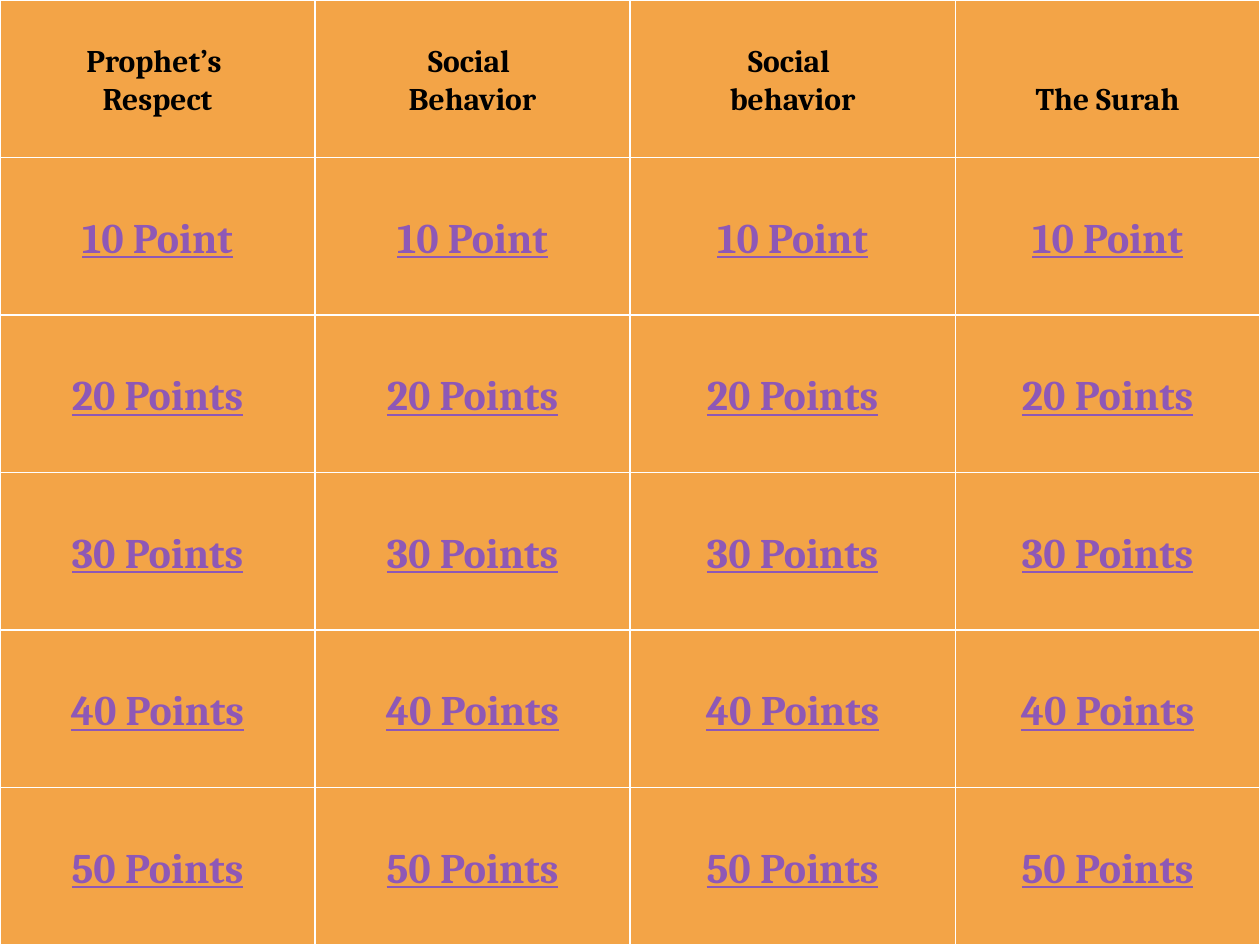
from itertools import accumulate

from pptx import Presentation
from pptx.dml.color import RGBColor
from pptx.enum.shapes import MSO_SHAPE as Shape
from pptx.enum.text import MSO_ANCHOR as Anchor, PP_ALIGN as Align
from pptx.util import Pt

WIDTHS = [180, 180, 185.8, 174.2]
LEFTS = [0, *accumulate(WIDTHS[:-1])]
ROW = 90
INSET = 3.6
DROP = 21.7  # sets a one-line topic level with the second line of the others
TOPICS = [
    ["Prophet’s ", "Respect"],
    ["Social ", "Behavior"],
    ["Social ", "behavior"],
    ["The Surah"],
]
SCORES = ["10 Point", "20 Points", "30 Points", "40 Points", "50 Points"]


def color(code):
    return RGBColor.from_string(code)


class Board:
    font = "Cambria"
    fill = "F3A447"
    edge = "FFFFFF"
    ink = "000000"
    link = "8E58B6"

    def __init__(self, slide):
        self.slide = slide

    def tile(self, col, row):
        box = self.slide.shapes.add_shape(
            Shape.ACTION_BUTTON_CUSTOM,
            Pt(LEFTS[col]), Pt(row * ROW), Pt(WIDTHS[col]), Pt(ROW))
        box.shadow.inherit = False
        box.fill.solid()
        box.fill.fore_color.rgb = color(self.fill)
        box.line.color.rgb = color(self.edge)
        box.line.width = Pt(0.75)
        frame = box.text_frame
        frame.word_wrap = False
        frame.vertical_anchor = Anchor.MIDDLE
        return frame

    def label(self, frame, lines, size, ink, under=False):
        para = frame.paragraphs[0]
        para.alignment = Align.CENTER
        for i, line in enumerate(lines):
            if i:
                para.add_line_break()
            run = para.add_run()
            run.text = line
            font = run.font
            font.name = self.font
            font.size = Pt(size)
            font.bold = True
            font.underline = under
            font.color.rgb = color(ink)

    def topic(self, col, lines):
        frame = self.tile(col, 0)
        if len(lines) == 1:
            frame.margin_top = Pt(INSET + DROP)
        self.label(frame, lines, 18, self.ink)

    def score(self, col, row, text):
        self.label(self.tile(col, row), [text], 24, self.link, under=True)


def main():
    deck = Presentation()
    deck.slide_width, deck.slide_height = Pt(720), Pt(540)
    board = Board(deck.slides.add_slide(deck.slide_layouts[6]))
    for col, lines in enumerate(TOPICS):
        board.topic(col, lines)
    for row, text in enumerate(SCORES, 1):
        for col in range(len(WIDTHS)):
            board.score(col, row, text)
    deck.save("out.pptx")


if __name__ == "__main__":
    main()
